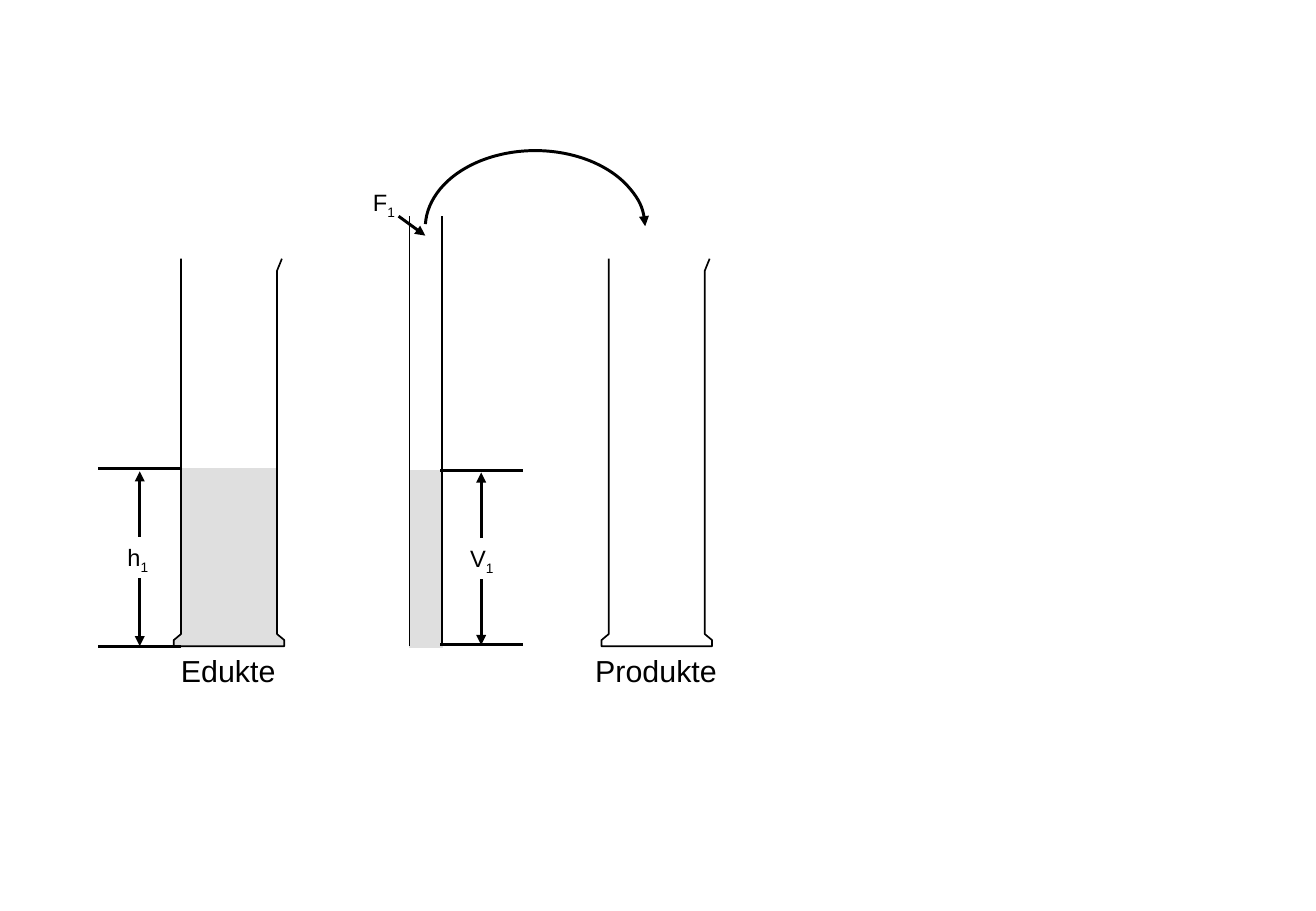
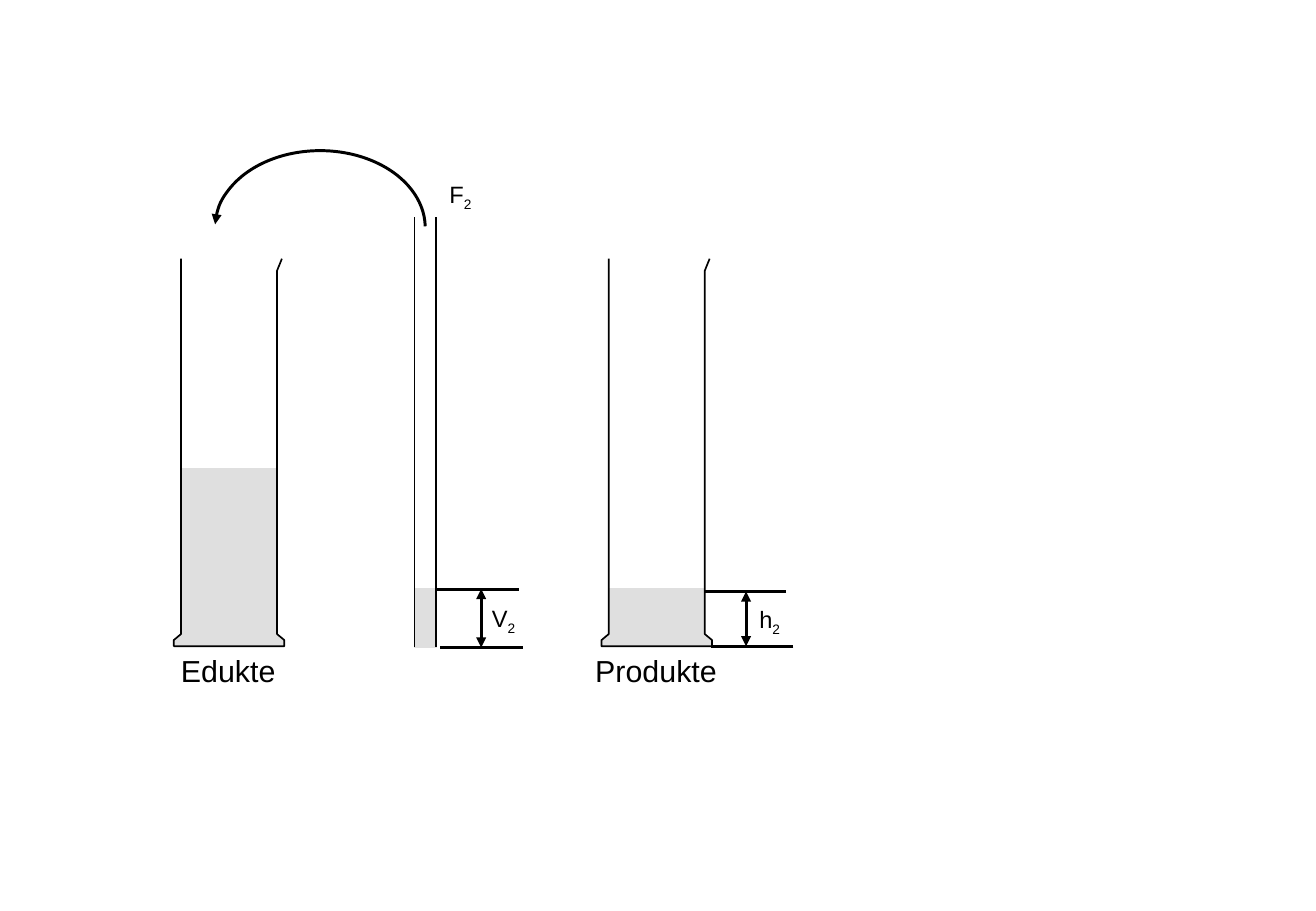
from lxml import etree
from pptx import Presentation
from pptx.dml.color import RGBColor
from pptx.enum.shapes import MSO_CONNECTOR, MSO_SHAPE
from pptx.enum.text import MSO_ANCHOR, MSO_AUTO_SIZE, PP_ALIGN
from pptx.oxml.ns import qn
from pptx.util import Pt

STRAIGHT = MSO_CONNECTOR.STRAIGHT
RECTANGLE, ARC = MSO_SHAPE.RECTANGLE, MSO_SHAPE.ARC
FIT_SHAPE = MSO_AUTO_SIZE.SHAPE_TO_FIT_TEXT
LEFT, TOP = PP_ALIGN.LEFT, MSO_ANCHOR.TOP

EMU_PER_PX = 9144  # 100 px to the inch
BLANK_LAYOUT = 6
FONT = "Arial"
BLACK, WHITE, LIQUID = "000000", "FFFFFF", "DFDFDF"
THIN, THICK = 1, 1.75
CAPTION_SIZE, SYMBOL_SIZE = 18, 14

BEAKER_TOP, BEAKER_HEIGHT = 213, 319
BEAKER_OUTLINE = [(89, 0), (85, 10), (85, 309), (91, 314), (91, 319),
                  (0, 319), (0, 314), (6, 309), (6, 0)]
TICK_LENGTH = 68
SYMBOL_HEIGHT = 34
SYMBOL_WIDTHS = {"h": 38, "F": 39, "V": 41}


def px(length):
    return length * EMU_PER_PX


def color(hex_string):
    return RGBColor.from_string(hex_string)


def style_line(shape, width, line_color=BLACK, head=False, tail=False):
    shape.line.color.rgb = color(line_color)
    shape.line.width = Pt(width)
    line = shape.element.spPr.find(qn("a:ln"))
    for tag, wanted in (("a:headEnd", head), ("a:tailEnd", tail)):
        if wanted:
            etree.SubElement(line, qn(tag), type="triangle")


def add_line(shapes, start, end, width=THICK, head=False, tail=False):
    points = [px(value) for value in (*start, *end)]
    line = shapes.add_connector(STRAIGHT, *points)
    style_line(line, width, head=head, tail=tail)
    etree.SubElement(line.element.spPr, qn("a:effectLst"))


def add_text(shapes, left, top, width, height, size, text, subscript=""):
    box = shapes.add_textbox(px(left), px(top), px(width), px(height))
    frame = box.text_frame
    frame.word_wrap = False
    frame.auto_size = FIT_SHAPE
    frame.vertical_anchor = TOP
    para = frame.paragraphs[0]
    para.alignment = LEFT
    for part in filter(None, (text, subscript)):
        span = para.add_run()
        span.text = part
        span.font.name = FONT
        span.font.size = Pt(size)
        span.font.color.rgb = color(BLACK)
    if subscript:
        span.font._element.set("baseline", "-25000")


def add_symbol(slide, left, top, letter, index):
    add_text(slide.shapes, left, top, SYMBOL_WIDTHS[letter], SYMBOL_HEIGHT,
             SYMBOL_SIZE, letter, index)


def add_beaker(slide, left, caption, caption_left, caption_width,
               empty_share=None):
    """Draw a captioned beaker; empty_share is the part above the liquid."""
    shapes = slide.shapes.add_group_shape().shapes
    points = [(left + x, BEAKER_TOP + y) for x, y in BEAKER_OUTLINE]
    builder = shapes.build_freeform(*points[0], scale=EMU_PER_PX)
    builder.add_line_segments(points[1:], close=False)
    beaker = builder.convert_to_shape()
    beaker.shadow.inherit = False
    if empty_share is None:
        beaker.fill.background()
    else:
        beaker.fill.gradient()
        beaker.fill.gradient_angle = 270
        for stop, shade in zip(beaker.fill.gradient_stops, (WHITE, LIQUID)):
            stop.position = empty_share
            stop.color.rgb = color(shade)
    style_line(beaker, THIN)
    add_text(shapes, caption_left, BEAKER_TOP + BEAKER_HEIGHT, caption_width,
             40, CAPTION_SIZE, caption)


def add_beakers(slide, product_empty_share=None):
    add_beaker(slide, 143, "Edukte", 139, 99, 0.54)
    add_beaker(slide, 495, "Produkte", 480, 121, product_empty_share)


def add_tube(slide, left, right, top, bottom, liquid_top):
    shapes = slide.shapes.add_group_shape().shapes
    liquid = shapes.add_shape(RECTANGLE, px(left), px(liquid_top),
                              px(right - left), px(533 - liquid_top))
    liquid.shadow.inherit = False
    liquid.fill.solid()
    liquid.fill.fore_color.rgb = color(LIQUID)
    style_line(liquid, THIN, LIQUID)
    for x in (right, left):
        add_line(shapes, (x, top), (x, bottom), THIN)


def add_transfer_arc(slide, left, top, width, height, head=False, tail=False):
    arc = slide.shapes.add_shape(ARC, px(left), px(top), px(width), px(height))
    arc.rotation = 270
    arc.shadow.inherit = False
    arc.fill.background()
    for number, degrees in enumerate((271.9, 89.2)):
        arc.adjustments[number] = degrees * 0.6
    style_line(arc, THICK, head=head, tail=tail)


def add_dimension(slide, x, top, bottom, tick_lefts, symbol, symbol_left,
                  symbol_top, split=False):
    """Mark a height; split arrows leave a gap for the symbol."""
    for left, y in zip(tick_lefts, (top, bottom)):
        add_line(slide.shapes, (left + TICK_LENGTH, y), (left, y))
    if split:
        add_line(slide.shapes, (x, symbol_top), (x, top + 2), tail=True)
        add_line(slide.shapes, (x, symbol_top + SYMBOL_HEIGHT), (x, bottom),
                 tail=True)
    else:
        add_line(slide.shapes, (x, top), (x, bottom), head=True, tail=True)
    add_symbol(slide, symbol_left, symbol_top, *symbol)


def add_forward_slide(deck):
    slide = deck.slides.add_slide(deck.slide_layouts[BLANK_LAYOUT])
    add_beakers(slide)
    add_tube(slide, 337, 364, 178, 532, liquid_top=388)
    add_dimension(slide, 115, 386, 532, (81, 81), "h1", 95, 442, split=True)
    add_transfer_arc(slide, 377, 97, 127, 181, tail=True)
    add_symbol(slide, 297, 150, "F", "1")
    add_dimension(slide, 396, 387, 531, (362, 362), "V1", 377, 443, split=True)
    add_line(slide.shapes, (328, 178), (350, 194), tail=True)


def add_backward_slide(deck):
    slide = deck.slides.add_slide(deck.slide_layouts[BLANK_LAYOUT])
    add_beakers(slide, product_empty_share=0.85)
    add_tube(slide, 341, 359, 179, 533, liquid_top=485)
    add_dimension(slide, 614, 487, 532, (579, 585), "h2", 615, 493)
    add_transfer_arc(slide, 200, 101, 127, 173, head=True)
    add_symbol(slide, 360, 143, "F", "2")
    add_dimension(slide, 396, 485, 533, (359, 362), "V2", 395, 492)


def main():
    deck = Presentation()
    deck.slide_width, deck.slide_height = px(1083), px(750)
    add_forward_slide(deck)
    add_backward_slide(deck)
    deck.save("out.pptx")


if __name__ == "__main__":
    main()
